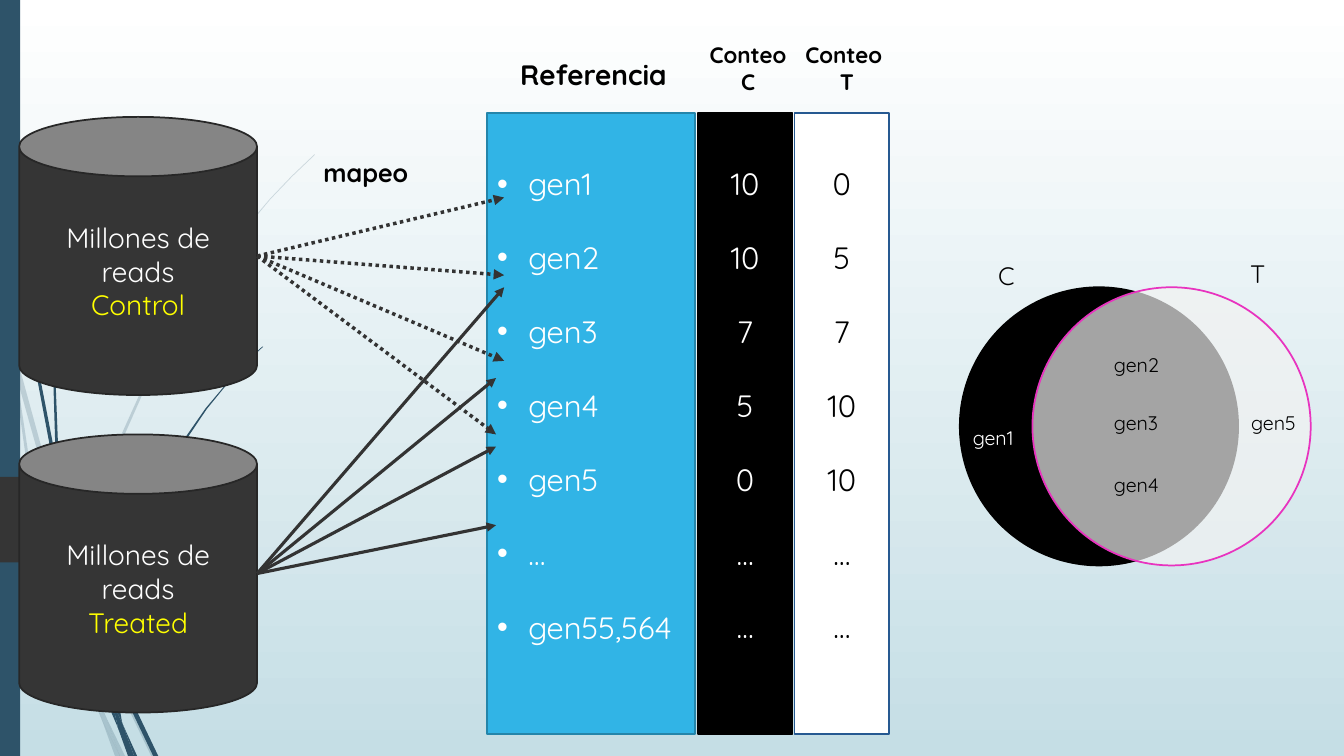
from pptx import Presentation
from pptx.dml.color import RGBColor
from pptx.enum.dml import MSO_LINE
from pptx.enum.shapes import MSO_CONNECTOR, MSO_SHAPE
from pptx.enum.text import MSO_ANCHOR, MSO_AUTO_SIZE, PP_ALIGN
from pptx.oxml.ns import qn
from pptx.util import Inches, Pt
from lxml.etree import SubElement

COLORS = {
    "white": "FFFFFF", "sky": "C5DEE5", "navy": "2E5369", "coal": "353535",
    "edge": "272727", "yellow": "FFFF00", "blue": "31B4E6", "blue_edge": "2485AA",
    "black": "000000", "column_edge": "265991", "arrow": "333333",
    "mist": "F2F2F2", "pink": "E833BF",
}

PALE_WISPS = [
    [(0.11, 3.5), (0.09, 3.22), (0, 2.82), (0, 2.99), (0.1, 3.44)],
    [(0.58, 5.22), (0.84, 5.99), (0.85, 5.86), (0.62, 5.2), (0.14, 3.45), (0.17, 3.76)],
    [(0.92, 6.07), (0.88, 5.96), (0.88, 6.1), (1.23, 6.94), (1.5, 7.5), (1.55, 7.5),
     (1.27, 6.92)],
    [(1.19, 7.5), (1.24, 7.5), (1.05, 7.11)],
    [(0.93, 6.83), (0.7, 6.19), (0.31, 4.69), (0.17, 3.76), (0.11, 3.5), (0.28, 4.7),
     (0.65, 6.21), (0.92, 6.93), (1.01, 7.14), (0.99, 7.07)],
    [(0.84, 5.99), (0.87, 6.46), (0.93, 6.83), (0.96, 6.92), (1.05, 7.11), (1.03, 7.06),
     (0.91, 6.46), (0.88, 6.1), (0.88, 6.08)],
    [(0.88, 5.84), (1.1, 4.62), (1.6, 3.49), (2.29, 2.45), (2.68, 1.98), (2.9, 1.75),
     (3.12, 1.54), (3.12, 1.53), (2.89, 1.75), (2.68, 1.97), (2.28, 2.44), (1.58, 3.48),
     (1.07, 4.61), (0.85, 5.84), (0.85, 5.86), (0.88, 5.96)],
    [(1.01, 7.14), (1.14, 7.5), (1.19, 7.5)],
    [(0.88, 6.08), (0.88, 6.1), (0.88, 5.96), (0.85, 5.86), (0.84, 5.99)],
    [(0.96, 6.92), (0.93, 6.83), (0.99, 7.07), (1.01, 7.14), (1.19, 7.5), (1.05, 7.11)],
]
DARK_WISPS = [
    [(0.07, 1.1), (0.17, 2.33), (0.33, 3.55), (0.56, 4.77), (0.57, 4.81), (0.55, 4.57),
     (0.55, 4.53), (0.36, 3.55), (0.19, 2.32), (0.08, 1.09), (0.05, 0.48), (0.04, 0),
     (0.03, 0), (0.04, 0.48)],
    [(0.88, 5.92), (1.06, 6.45), (1.06, 6.31), (0.93, 5.9), (0.6, 4.72), (0.64, 5.05)],
    [(1.13, 6.49), (1.1, 6.41), (1.11, 6.56), (1.32, 7.08), (1.52, 7.5), (1.57, 7.5),
     (1.36, 7.06)],
    [(1.1, 6.91), (0.98, 6.57), (0.72, 5.56), (0.64, 5.05), (0.57, 4.77), (0.68, 5.57),
     (0.93, 6.59), (1.11, 7.08), (1.17, 7.22), (1.16, 7.17)],
    [(0.6, 4.72), (0.58, 4.53), (0.54, 3.49), (0.58, 2.45), (0.63, 1.93), (0.7, 1.41),
     (0.62, 1.93), (0.56, 2.45), (0.52, 3.49), (0.55, 4.49)],
    [(1.33, 7.5), (1.36, 7.5), (1.22, 7.19)],
    [(0.57, 4.77), (0.64, 5.05), (0.6, 4.72), (0.55, 4.49), (0.55, 4.53)],
    [(1.11, 6.33), (1.25, 5.52), (1.58, 4.76), (2.05, 4.06), (2.31, 3.74), (2.45, 3.59),
     (2.61, 3.44), (2.6, 3.44), (2.45, 3.58), (2.31, 3.73), (2.04, 4.05), (1.56, 4.74),
     (1.22, 5.51), (1.06, 6.31), (1.1, 6.41)],
    [(1.17, 7.22), (1.27, 7.5), (1.31, 7.5)],
    [(1.06, 6.45), (1.1, 6.91), (1.16, 7.06), (1.22, 7.19), (1.21, 7.16), (1.11, 6.56),
     (1.09, 6.51)],
    [(1.06, 6.45), (1.09, 6.51), (1.11, 6.56), (1.1, 6.41), (1.06, 6.31)],
    [(1.16, 7.06), (1.1, 6.91), (1.16, 7.17), (1.17, 7.22), (1.3, 7.5), (1.33, 7.5),
     (1.22, 7.19)],
]


class SlideBuilder:
    font = "Quicksand"

    def __init__(self, deck):
        self.page = deck.slides.add_slide(deck.slide_layouts[1])
        self.shapes = self.page.shapes

    def color(self, name):
        return RGBColor.from_string(COLORS[name])

    def apply(self, target, values):
        for name, value in values.items():
            setattr(target, name, value)

    def background(self, top, bottom):
        fill = self.page.background.fill
        fill.gradient()
        fill.gradient_angle = 270
        for stop, name in zip(fill.gradient_stops, (top, bottom)):
            stop.color.rgb = self.color(name)

    def paint(self, box, fill, line=None, alpha=None):
        box.fill.solid()
        box.fill.fore_color.rgb = self.color(fill)
        if alpha:
            tint = box.element.spPr.find(qn("a:solidFill"))[0]
            SubElement(tint, qn("a:alpha"), val=str(alpha * 1000))
        if line:
            box.line.color.rgb = self.color(line)
            box.line.width = Pt(1.25)
        else:
            box.line.fill.background()

    def wisp(self, points, alpha=None):
        corners = [(Inches(x), Inches(y)) for x, y in points]
        builder = self.shapes.build_freeform(*corners[0])
        builder.add_line_segments(corners[1:])
        outline = builder.convert_to_shape()
        outline.shadow.inherit = False
        self.paint(outline, "navy", alpha=alpha)

    def shape(self, kind, place, fill, line=None, alpha=None):
        box = self.shapes.add_shape(kind, *map(Inches, place))
        box.shadow.inherit = False
        self.paint(box, fill, line, alpha)
        return box

    def put_text(self, box, lines, size, colors, bold=False, frame=None, para=None):
        text = box.text_frame
        self.apply(text, {"auto_size": MSO_AUTO_SIZE.NONE, **(frame or {})})
        for index, line in enumerate(lines):
            item = text.paragraphs[0] if index == 0 else text.add_paragraph()
            self.apply(item, para or {})
            span = item.add_run()
            span.text = line
            self.apply(span.font, {"name": self.font, "size": Pt(size), "bold": bold})
            span.font.color.rgb = self.color(colors[index % len(colors)])

    def label(self, place, lines, size, color="black", bold=False, align=PP_ALIGN.LEFT):
        box = self.shapes.add_textbox(*map(Inches, place))
        self.put_text(box, lines, size, [color], bold,
                      {"word_wrap": False}, {"alignment": align})

    def placeholder(self, index, place):
        box = self.page.placeholders[index]
        self.apply(box, dict(zip(("left", "top", "width", "height"), map(Inches, place))))
        return box

    def title(self, place, text):
        self.put_text(self.placeholder(0, place), [text], 20, ["black"], True,
                      {"word_wrap": False, "vertical_anchor": MSO_ANCHOR.TOP},
                      {"alignment": PP_ALIGN.LEFT})

    def column(self, box, lines, color, align=PP_ALIGN.CENTER):
        self.put_text(box, lines, 22, [color], False,
                      {"vertical_anchor": MSO_ANCHOR.MIDDLE, "margin_bottom": Inches(0.78)},
                      {"alignment": align, "line_spacing": 2.0, "space_before": Pt(0)})

    def gene_list(self, place, genes):
        box = self.placeholder(1, place)
        self.paint(box, "blue", "blue_edge")
        self.column(box, genes, "white", PP_ALIGN.LEFT)
        for para in box.text_frame.paragraphs:
            props = para._p.get_or_add_pPr()
            props.set("marL", str(Inches(0.31)))
            props.set("indent", str(Inches(-0.31)))

    def arrow(self, start, end, width, dash=None):
        link = self.shapes.add_connector(MSO_CONNECTOR.STRAIGHT, *map(Inches, start + end))
        link.line.color.rgb = self.color("arrow")
        self.apply(link.line, {"width": Pt(width), "dash_style": dash})
        props = link.element.spPr
        SubElement(props.find(qn("a:ln")), qn("a:tailEnd"), type="triangle")
        SubElement(props, qn("a:effectLst"))


def main():
    deck = Presentation()
    deck.slide_width, deck.slide_height = Inches(13.33), Inches(7.5)
    slide = SlideBuilder(deck)
    slide.background("white", "sky")
    for wisps, alpha in ((PALE_WISPS, 20), (DARK_WISPS, None)):
        for points in wisps:
            slide.wisp(points, alpha)
    slide.shape(MSO_SHAPE.RECTANGLE, (0, 0, 0.2, 7.5), "navy")
    slide.shape(MSO_SHAPE.PENTAGON, (0, 4.73, 1.91, 0.85), "coal")

    for top, sample in ((1.16, "Control"), (4.31, "Treated")):
        can = slide.shape(MSO_SHAPE.CAN, (0.19, top, 2.36, 2.76), "coal", "edge")
        slide.put_text(can, ["Millones de reads", sample], 20, ["white", "yellow"],
                       frame={"word_wrap": True, "vertical_anchor": MSO_ANCHOR.MIDDLE},
                       para={"alignment": PP_ALIGN.CENTER})

    slide.title((5.06, 0.52, 1.67, 0.44), "Referencia")
    slide.gene_list((4.83, 1.12, 2.06, 6.16),
                    [f"gen{n}" for n in range(1, 6)] + ["…", "gen55,564"])
    for left, fill, line, color, counts in (
        (6.92, "black", "black", "white", ["10", "10", "7", "5", "0"]),
        (7.88, "white", "column_edge", "black", ["0", "5", "7", "10", "10"]),
    ):
        box = slide.shape(MSO_SHAPE.RECTANGLE, (left, 1.12, 0.94, 6.16), fill, line)
        slide.column(box, counts + ["…", "…"], color)
    slide.label((6.9, 0.36, 1.04, 0.64), ["Conteo", "C"], 16, bold=True, align=PP_ALIGN.CENTER)
    slide.label((7.85, 0.36, 1.1, 0.64), ["Conteo ", "T"], 16, bold=True, align=PP_ALIGN.CENTER)
    slide.label((3.11, 1.51, 1.09, 0.4), ["mapeo"], 18, bold=True)

    for end in ((5, 1.96), (5, 2.73), (5, 3.58), (4.92, 4.31)):
        slide.arrow((2.55, 2.54), end, 2.5, MSO_LINE.ROUND_DOT)
    for end in ((5, 2.85), (4.92, 3.75), (4.92, 4.43), (4.92, 5.21)):
        slide.arrow((2.55, 5.69), end, 2.25)

    slide.shape(MSO_SHAPE.OVAL, (9.52, 2.85, 2.76, 2.76), "black", "black")
    slide.shape(MSO_SHAPE.OVAL, (10.24, 2.85, 2.76, 2.76), "mist", "pink", 68)
    for gene, left, top, color in (
        ("gen1", 9.55, 4.18, "white"), ("gen2", 10.95, 3.45, "black"),
        ("gen3", 10.95, 4.03, "black"), ("gen4", 10.95, 4.64, "black"),
        ("gen5", 12.31, 4.03, "black"),
    ):
        slide.label((left, top, 0.69, 0.34), [gene], 14, color)
    slide.label((9.8, 2.53, 0.41, 0.4), ["C"], 18)
    slide.label((12.3, 2.51, 0.31, 0.4), ["T"], 18)
    deck.save("out.pptx")


if __name__ == "__main__":
    main()
